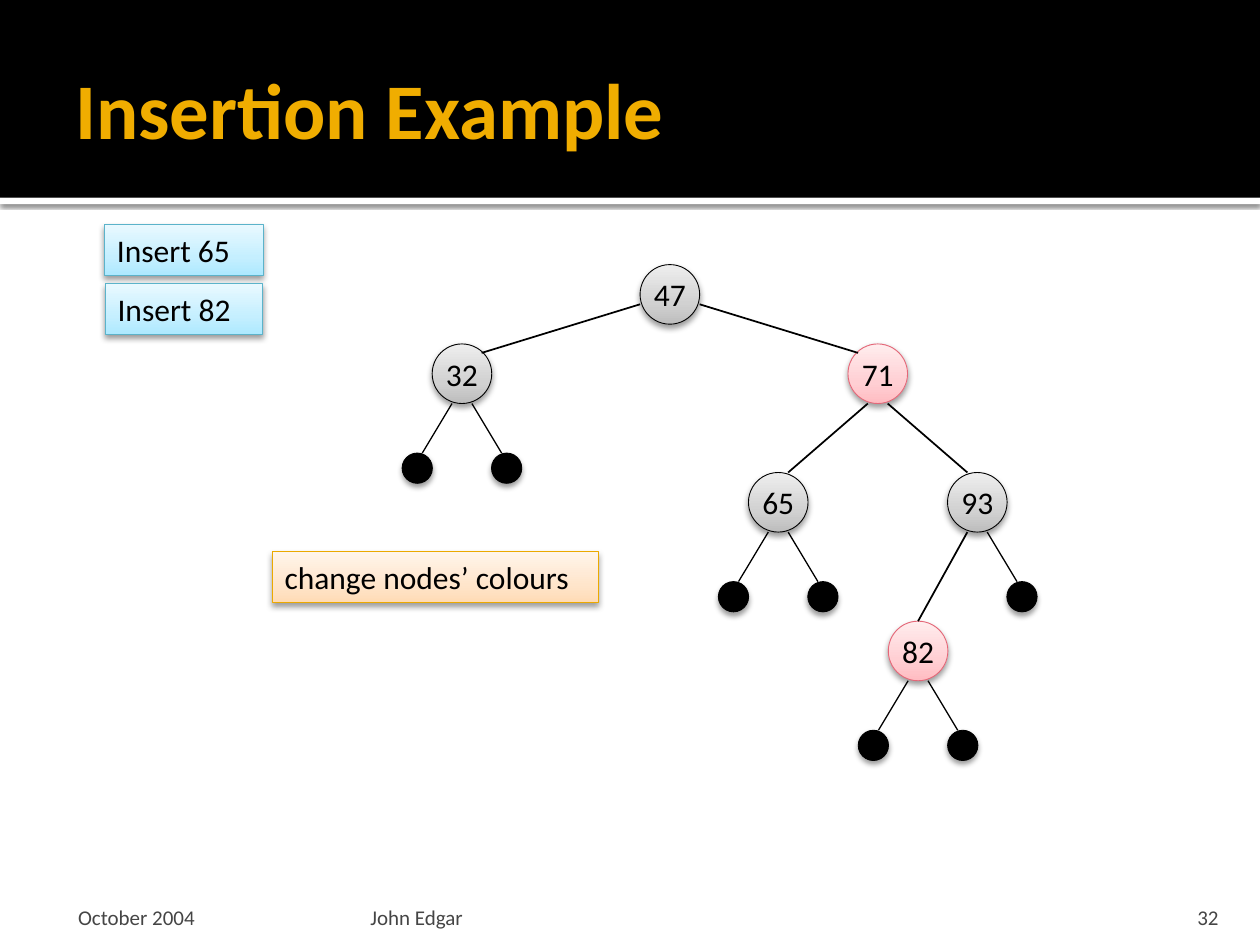
from copy import deepcopy
from lxml.etree import SubElement
from pptx import Presentation
from pptx.dml.color import RGBColor
from pptx.enum.shapes import MSO_CONNECTOR, MSO_SHAPE
from pptx.enum.text import MSO_ANCHOR, PP_ALIGN
from pptx.oxml.ns import qn
from pptx.util import Inches, Pt

BLACK = RGBColor(0, 0, 0)
WHITE = RGBColor(255, 255, 255)
GOLD = RGBColor(0xF0, 0xAD, 0x00)
SLATE = RGBColor(0x45, 0x45, 0x45)
ROSE = RGBColor(0xE4, 0x67, 0x78)
TEAL = RGBColor(0x5B, 0xB3, 0xCA)
AMBER = RGBColor(0xEB, 0xA9, 0x00)
GREYS = [RGBColor(0xBD, 0xBD, 0xBD), RGBColor(0xD1, 0xD1, 0xD1), RGBColor(0xEE, 0xEE, 0xEE)]
PINKS = [RGBColor(0xFF, 0xBC, 0xC2), RGBColor(0xFF, 0xCF, 0xD3), RGBColor(0xFF, 0xED, 0xEE)]
BLUES = [RGBColor(0xAD, 0xE9, 0xFF), RGBColor(0xC5, 0xEF, 0xFF), RGBColor(0xE9, 0xF9, 0xFF)]
PEACH = [RGBColor(0xFF, 0xDB, 0xB5), RGBColor(0xFF, 0xE5, 0xCB), RGBColor(0xFF, 0xF5, 0xEB)]

COLS, ROWS = 100, 75
NODE, DOT, DROP = 4.73, 2.4, 3.93
LOW, HIGH = 1 / 3, 2 / 3

NODES = {
    "47": (50.8, 21, GREYS, BLACK),
    "32": (34.3, 27.3, GREYS, BLACK),
    "71": (67.3, 27.3, PINKS, ROSE),
    "65": (59.4, 37.5, GREYS, BLACK),
    "93": (75.2, 37.5, GREYS, BLACK),
    "82": (70.5, 49.3, PINKS, ROSE),
}
EDGES = [
    ("47", 0, HIGH, "32", 0.83, 0.15),
    ("47", 1, HIGH, "71", 0.17, 0.15),
    ("71", LOW, 1, "65", HIGH, 0),
    ("71", HIGH, 1, "93", LOW, 0),
    ("93", LOW, 1, "82", 0.5, 0),
]
LEAVES = {"32": (-1, 1), "65": (-1, 1), "93": (1,), "82": (-1, 1)}
NOTES = [
    ("Insert 65", 8.3, 17.8, 12.6, BLUES, TEAL),
    ("Insert 82", 8.35, 22.5, 12.5, BLUES, TEAL),
    ("change nodes’ colours", 21.6, 43.8, 25.9, PEACH, AMBER),
]


def grid(*spans):
    return [Inches(span / 10) for span in spans]


def write(frame, text, size=18, color=BLACK, bold=False, align=PP_ALIGN.LEFT,
          anchor=MSO_ANCHOR.MIDDLE, inset=(1, 0.5, 1, 0.5), wrap=True):
    frame.word_wrap = wrap
    frame.vertical_anchor = anchor
    (frame.margin_left, frame.margin_top,
     frame.margin_right, frame.margin_bottom) = grid(*inset)
    para = frame.paragraphs[0]
    para.alignment = align
    run = para.add_run()
    run.text = text
    run.font.name = "Calibri"
    run.font.size = Pt(size)
    run.font.bold = bold
    run.font.color.rgb = color


def label(slide, text, box, **style):
    write(slide.shapes.add_textbox(*grid(*box)).text_frame, text, **style)


def blend(fill, tones):
    fill.gradient()
    fill.gradient_angle = 90
    first = fill.gradient_stops[0]._gs
    first.addnext(deepcopy(first))
    for stop, tone, place in zip(fill.gradient_stops, tones, (0, 0.35, 1)):
        stop.color.rgb = tone
        stop.position = place


def shade(shape, alpha, blur, dist):
    effect = shape._element.spPr.find(qn("a:effectLst"))
    outer = SubElement(effect, qn("a:outerShdw"), blurRad=str(Pt(blur)),
                       dist=str(Pt(dist)), dir="5400000", rotWithShape="0")
    tint = SubElement(outer, qn("a:srgbClr"), val=str(BLACK))
    SubElement(tint, qn("a:alpha"), val=str(alpha * 1000))


def form(slide, kind, box, fill, line=None, shadow=None):
    shape = slide.shapes.add_shape(kind, *grid(*box))
    if isinstance(fill, list):
        blend(shape.fill, fill)
    else:
        shape.fill.solid()
        shape.fill.fore_color.rgb = fill
    if line is None:
        shape.line.fill.background()
    else:
        shape.line.color.rgb = line
        shape.line.width = Pt(0.5)
    shape.shadow.inherit = False
    if shadow:
        shade(shape, *shadow)
    return shape


def link(slide, start, end, width):
    line = slide.shapes.add_connector(MSO_CONNECTOR.STRAIGHT, *grid(*start, *end))
    line.line.color.rgb = BLACK
    line.line.width = Pt(width)
    SubElement(line._element.spPr, qn("a:effectLst"))


def spot(name, across, down):
    left, top = NODES[name][:2]
    return left + across * NODE, top + down * NODE


def node(slide, name):
    left, top, tones, line = NODES[name]
    shape = form(slide, MSO_SHAPE.OVAL, (left, top, NODE, NODE), tones, line, (38, 3.5, 2))
    write(shape.text_frame, name, align=PP_ALIGN.CENTER, inset=(0, 0, 0, 0), wrap=False)


def leaf(slide, name, side):
    start = spot(name, 0.5 + side / 6, 1)
    end = start[0] + side * 2.36, start[1] + DROP
    mid = spot(name, 0.5 + side * 0.75, 1)[0]
    link(slide, start, end, 0.75)
    form(slide, MSO_SHAPE.OVAL, (mid - DOT / 2, end[1], DOT, DOT), BLACK, BLACK, (38, 3.1, 2))


def note(slide, text, left, top, width, tones, line):
    shape = form(slide, MSO_SHAPE.RECTANGLE, (left, top, width, 4.04), tones, line, (38, 3.5, 2))
    write(shape.text_frame, text)


def frame(slide):
    form(slide, MSO_SHAPE.RECTANGLE, (0, 15.7, COLS, 0.5), WHITE, shadow=(60, 2.5, 0.8))
    form(slide, MSO_SHAPE.RECTANGLE, (0, 0, COLS, 15.7), BLACK)
    label(slide, "Insertion Example", (5, 1.7, 90, 13.7), size=45, color=GOLD,
          bold=True, inset=(1, 0.5, 0.5, 0.5))
    foot = dict(size=12, color=SLATE, anchor=MSO_ANCHOR.BOTTOM)
    label(slide, "October 2004", (5, 70.8, 23.3, 3), inset=(1.2, 0.5, 0.5, 0), **foot)
    label(slide, "John Edgar", (28.9, 70.8, 60.2, 3), inset=(0.5, 0.5, 0.5, 0), **foot)
    label(slide, "32", (89.7, 70.8, 8, 3), inset=(1, 0.5, 1, 0),
          align=PP_ALIGN.RIGHT, **foot)


def main():
    deck = Presentation()
    deck.slide_width, deck.slide_height = grid(COLS, ROWS)
    slide = deck.slides.add_slide(deck.slide_layouts[6])
    frame(slide)
    for name in NODES:
        node(slide, name)
    for top, out, drop, low, across, down in EDGES:
        link(slide, spot(top, out, drop), spot(low, across, down), 1)
    for name, sides in LEAVES.items():
        for side in sides:
            leaf(slide, name, side)
    for item in NOTES:
        note(slide, *item)
    deck.save("out.pptx")


if __name__ == "__main__":
    main()
